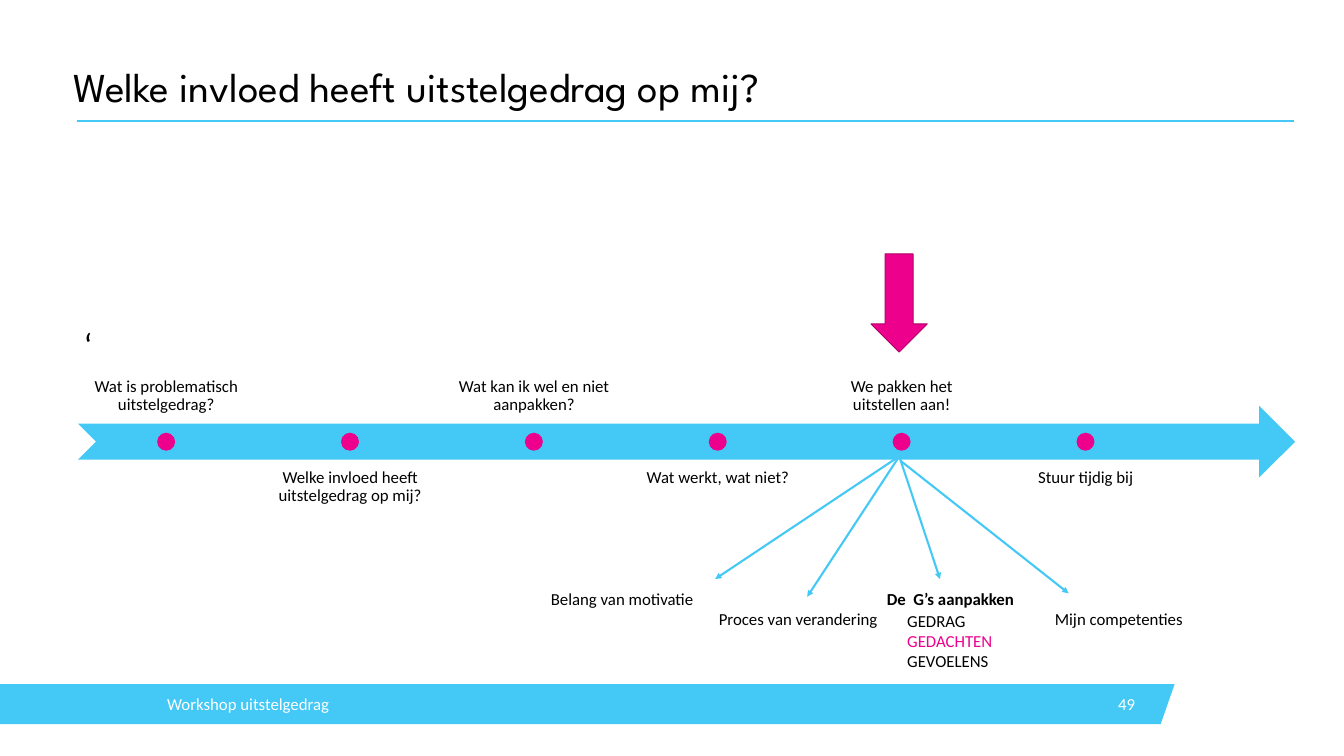
from lxml import etree
from pptx import Presentation
from pptx.dml.color import RGBColor
from pptx.enum.shapes import MSO_CONNECTOR, MSO_SHAPE
from pptx.enum.text import MSO_ANCHOR, PP_ALIGN
from pptx.oxml.ns import qn
from pptx.util import Cm, Pt

LINE = MSO_CONNECTOR.STRAIGHT
OVAL, NOTCH, DOWN = MSO_SHAPE.OVAL, MSO_SHAPE.NOTCHED_RIGHT_ARROW, MSO_SHAPE.DOWN_ARROW
TOP, MID, LOW = MSO_ANCHOR.TOP, MSO_ANCHOR.MIDDLE, MSO_ANCHOR.BOTTOM
LEFT, MIDST, RIGHT = PP_ALIGN.LEFT, PP_ALIGN.CENTER, PP_ALIGN.RIGHT
HUES = {"blue": "44C8F5", "pink": "EC008C", "plum": "AF0068", "ink": "000000", "white": "FFFFFF"}
HUES = {name: RGBColor.from_string(code) for name, code in HUES.items()}

deck = Presentation()
deck.slide_width, deck.slide_height = Cm(50.8), Cm(28.58)
slide = deck.slides.add_slide(deck.slide_layouts[6])
shapes = slide.shapes


def write(box, rows, pad=(0.25, 0.13), anchor=TOP, align=LEFT, space=1.0,
          size=18, font="Calibri", tabs=()):
    """Add a text box; rows holds one list of (text, hue, bold) runs per paragraph."""
    frame = shapes.add_textbox(*map(Cm, box)).text_frame
    side, edge = map(Cm, pad)
    form = {"word_wrap": True, "vertical_anchor": anchor, "margin_left": side,
            "margin_right": side, "margin_top": edge, "margin_bottom": edge}
    for key, value in form.items():
        setattr(frame, key, value)
    for i, row in enumerate(rows):
        para = frame.add_paragraph() if i else frame.paragraphs[0]
        para.alignment, para.line_spacing = align, space
        if tabs:
            stops = etree.SubElement(para._p.get_or_add_pPr(), qn("a:tabLst"))
            for stop in tabs:
                etree.SubElement(stops, qn("a:tab"), pos=str(Cm(stop)), algn="l")
        for text, hue, bold in row:
            run = para.add_run()
            run.text = text
            run.font.color.rgb = HUES[hue]
            for key, value in {"name": font, "size": Pt(size), "bold": bold}.items():
                setattr(run.font, key, value)


def paint(shape, hue, edge=None):
    shape.shadow.inherit = False
    shape.fill.solid()
    shape.fill.fore_color.rgb = HUES[hue]
    if edge:
        shape.line.color.rgb = HUES[edge]
        shape.line.width = Pt(1)
    else:
        shape.line.fill.background()


# Footer, title and body
path = shapes.build_freeform(Cm(0), Cm(25.86))
path.add_line_segments([(Cm(44.4), Cm(25.86)), (Cm(43.87), Cm(27.38)), (Cm(0), Cm(27.38))])
paint(path.convert_to_shape(), "blue")
write((2.77, 2.46, 46.05, 1.75), [[("Welke invloed heeft uitstelgedrag op mij?", "ink", False)]],
      pad=(0, 0), anchor=LOW, space=0.9, size=44, font="League Spartan")
write((2.92, 12.3, 46.05, 11.2), [[("‘", "ink", False)]], space=0.9, size=36)
write((6.32, 25.86, 17.15, 1.52), [[("Workshop uitstelgedrag", "white", False)]],
      pad=(0, 0), anchor=MID)
write((40.39, 25.86, 2.77, 1.52), [[("49", "white", False)]], anchor=MID, align=RIGHT)

# Timeline, with labels in turn above and below
paint(shapes.add_shape(NOTCH, Cm(2.95), Cm(15.34), Cm(46), Cm(2.72)), "blue")
STEPS = ["Wat is problematisch uitstelgedrag?", "Welke invloed heeft uitstelgedrag op mij?",
         "Wat kan ik wel en niet aanpakken?", "Wat werkt, wat niet?",
         "We pakken het uitstellen aan!", "Stuur tijdig bij"]
for i, step in enumerate(STEPS):
    x = 2.97 + 6.95 * i
    y, anchor = (17.37, TOP) if i % 2 else (13.31, LOW)
    write((x, y, 6.63, 2.72), [[(step, "ink", False)]], pad=(0.36, 0.36),
          anchor=anchor, align=MIDST, space=0.9)
    paint(shapes.add_shape(OVAL, Cm(x + 2.97), Cm(16.36), Cm(0.68), Cm(0.68)), "pink")
paint(shapes.add_shape(DOWN, Cm(32.92), Cm(9.6), Cm(2.13), Cm(3.71)), "pink", "plum")

# Title rule and the arrows to the four topics
LINES = [(2.9, 4.57, 48.9, 4.57), (33.99, 17.25, 27.03, 21.89), (33.99, 17.25, 30.51, 22.56),
         (33.99, 17.25, 35.53, 21.89), (34.04, 17.42, 40.39, 22.43)]
for i, ends in enumerate(LINES):
    line = shapes.add_connector(LINE, *map(Cm, ends))
    line.line.color.rgb = HUES["blue"]
    line.line.width = Pt(2.25)
    if i:
        etree.SubElement(line.line._get_or_add_ln(), qn("a:tailEnd"), type="triangle")
    etree.SubElement(line._element.spPr, qn("a:effectLst"))

# Topics, in columns of equal width
write((16.76, 22.12, 29.82, 1.8),
      [[("\tBelang van motivatie\t\t", "ink", False), ("De  G’s aanpakken", "ink", True)],
       [("\t\tProces van verandering\t\tMijn competenties", "ink", False)]],
      tabs=[3.81 + 6.35 * i for i in range(4)])
write((34.04, 22.94, 16.5, 2.57),
      [[("GEDRAG", "ink", False)], [("GEDACHTEN", "pink", False)], [("GEVOELENS", "ink", False)]])

deck.save("out.pptx")
